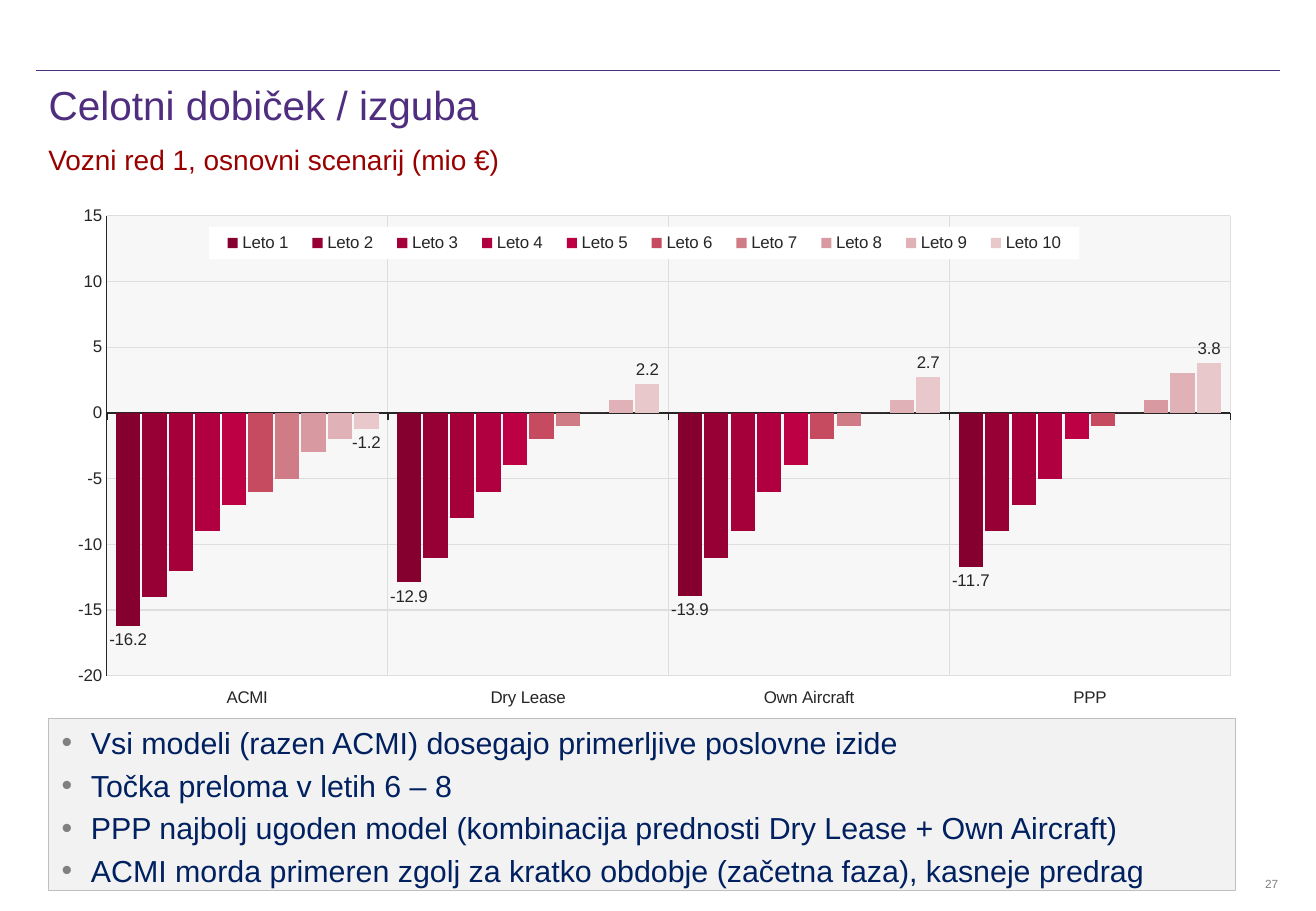
from lxml import etree
from pptx import Presentation
from pptx.chart.data import CategoryChartData
from pptx.dml.color import RGBColor
from pptx.enum.chart import XL_CHART_TYPE as ChartType, XL_LABEL_POSITION as LabelPos
from pptx.enum.chart import XL_LEGEND_POSITION as LegendPos, XL_TICK_LABEL_POSITION as TickLabelPos
from pptx.enum.chart import XL_TICK_MARK as TickMark
from pptx.enum.shapes import MSO_CONNECTOR as Connector, MSO_SHAPE as Shape
from pptx.enum.text import MSO_ANCHOR as Anchor, MSO_AUTO_SIZE as AutoSize, PP_ALIGN as Align
from pptx.oxml import parse_xml
from pptx.oxml.ns import nsdecls, qn
from pptx.util import Cm, Pt

COLORS = {
    "purple": "4F2D7F", "red": "990000", "navy": "002060", "text": "262626",
    "grid": "DEDEDE", "panel": "F2F2F2", "border": "BFBFBF",
    "bullet": "808080", "page": "7F7F7F", "white": "FFFFFF",
}
MODELS = ["ACMI", "Dry Lease", "Own Aircraft", "PPP"]
# One row per year: bar colour, then the profit or loss of each model
YEARS = [
    ("86002F", (-16.2, -12.9, -13.9, -11.7)),
    ("960035", (-14, -11, -11, -9)),
    ("A5003A", (-12, -8, -9, -7)),
    ("B1003F", (-9, -6, -6, -5)),
    ("BD0043", (-7, -4, -4, -2)),
    ("C74B60", (-6, -2, -2, -1)),
    ("D07C87", (-5, -1, -1, 0)),
    ("D899A0", (-3, 0, 0, 1)),
    ("E0B2B7", (-2, 1, 1, 3)),
    ("E8C8CB", (-1.2, 2.2, 2.7, 3.8)),
]
FINDINGS = [
    "Vsi modeli (razen ACMI) dosegajo primerljive poslovne izide",
    "Točka preloma v letih 6 – 8",
    "PPP najbolj ugoden model (kombinacija prednosti Dry Lease + Own Aircraft)",
    "ACMI morda primeren zgolj za kratko obdobje (začetna faza), kasneje predrag",
]


def rgb(name):
    return RGBColor.from_string(COLORS[name])


def apply(target, **values):
    for name, value in values.items():
        setattr(target, name, value)


def set_font(font, size, color):
    apply(font, name="Arial", size=Pt(size), bold=False)
    font.color.rgb = rgb(color)


def set_line(line, color, width):
    line.color.rgb = rgb(color)
    line.width = Pt(width)


def set_box(shape, box):
    apply(shape, **dict(zip(("left", "top", "width", "height"), map(Cm, box))))


def add_text(slide, box, text, size, color, align=Align.LEFT, wrap=True):
    frame = slide.shapes.add_textbox(*map(Cm, box)).text_frame
    apply(frame, word_wrap=wrap, margin_left=0, margin_top=0, margin_right=0, margin_bottom=0)
    paragraph = frame.paragraphs[0]
    apply(paragraph, text=text, alignment=align)
    set_font(paragraph.font, size, color)


def add_header(slide, box):
    left, top, width, height = box
    rule = slide.shapes.add_connector(
        Connector.STRAIGHT, Cm(left), Cm(top), Cm(left + width), Cm(top))
    set_line(rule.line, "purple", 0.25)
    etree.SubElement(rule.line._get_or_add_ln().getparent(), qn("a:effectLst"))

    title = slide.shapes.title
    set_box(title, (left, top + 0.27, width, 1.02))
    apply(title.text_frame, text="Celotni dobiček / izguba", word_wrap=True,
          vertical_anchor=Anchor.MIDDLE, auto_size=AutoSize.NONE)
    heading = title.text_frame.paragraphs[0]
    apply(heading, alignment=Align.LEFT, line_spacing=0.9)
    set_font(heading.font, 24, "purple")
    add_text(slide, (left + 0.25, top + 1.5, 17.1, height - 1.5),
             "Vozni red 1, osnovni scenarij (mio €)", 16.6, "red")


def manual_layout(x, y, width, height, inner=False):
    target = '<c:layoutTarget val="inner"/>' if inner else ""
    return parse_xml(
        f'<c:layout {nsdecls("c")}><c:manualLayout>{target}'
        '<c:xMode val="edge"/><c:yMode val="edge"/>'
        f'<c:x val="{x}"/><c:y val="{y}"/><c:w val="{width}"/><c:h val="{height}"/>'
        '</c:manualLayout></c:layout>')


def area_fill(color, opacity):
    return parse_xml(
        f'<c:spPr {nsdecls("c", "a")}><a:solidFill><a:srgbClr val="{COLORS[color]}">'
        f'<a:alpha val="{opacity * 1000}"/></a:srgbClr></a:solidFill></c:spPr>')


def style_axes(chart):
    models, profit = chart.category_axis, chart.value_axis
    for axis, width in ((models, 1), (profit, 0.5)):
        apply(axis, has_major_gridlines=True, minor_tick_mark=TickMark.NONE)
        set_line(axis.major_gridlines.format.line, "grid", 0.75)
        set_line(axis.format.line, "text", width)
        set_font(axis.tick_labels.font, 10, "text")
    apply(models, tick_label_position=TickLabelPos.LOW, major_tick_mark=TickMark.OUTSIDE)
    apply(profit, minimum_scale=-20, maximum_scale=15, major_unit=5,
          major_tick_mark=TickMark.NONE)
    apply(profit.tick_labels, number_format="#,##0", number_format_is_linked=False)


def style_series(plot):
    apply(plot, gap_width=75, overlap=-9, vary_by_categories=False)
    for series, (color, _) in zip(plot.series, YEARS):
        series.invert_if_negative = False
        series.format.fill.solid()
        series.format.fill.fore_color.rgb = RGBColor.from_string(color)
    for series in (plot.series[0], plot.series[-1]):
        labels = series.data_labels
        apply(labels, show_value=True, position=LabelPos.OUTSIDE_END,
              number_format='#,##0.0;\\-#,##0.0;" "', number_format_is_linked=False)
        set_font(labels.font, 10, "text")


def add_profit_chart(slide, box):
    data = CategoryChartData()
    data.categories = MODELS
    for year, (_, values) in enumerate(YEARS, 1):
        data.add_series(f"Leto {year}", values)
    chart = slide.shapes.add_chart(
        ChartType.COLUMN_CLUSTERED, *map(Cm, box), data).chart
    apply(chart, has_title=False, has_legend=True)
    set_font(chart.font, 10, "text")
    style_axes(chart)
    style_series(chart.plots[0])

    legend = chart.legend
    apply(legend, position=LegendPos.TOP, include_in_layout=False)
    set_font(legend.font, 10, "text")
    legend_xml = legend._element
    for old in legend_xml.findall(qn("c:layout")):
        legend_xml.remove(old)
    legend_xml.find(qn("c:legendPos")).addnext(manual_layout(0.145, 0.055, 0.715, 0.063))
    legend_xml.find(qn("c:overlay")).addnext(area_fill("white", 100))

    plot_area = chart._chartSpace.chart.plotArea
    for old in plot_area.findall(qn("c:layout")):
        plot_area.remove(old)
    plot_area.insert(0, manual_layout(0.061, 0.033, 0.923, 0.902, inner=True))
    plot_area.append(area_fill("panel", 59))


def add_bullet(paragraph):
    properties = paragraph._p.get_or_add_pPr()
    properties.set("marL", str(Cm(0.64)))
    properties.set("indent", str(Cm(-0.61)))
    color = etree.SubElement(properties, qn("a:buClr"))
    etree.SubElement(color, qn("a:srgbClr"), val=COLORS["bullet"])
    etree.SubElement(properties, qn("a:buFont"), typeface="Arial")
    etree.SubElement(properties, qn("a:buChar"), char="•")


def add_findings(slide, box):
    panel = slide.shapes.add_shape(Shape.RECTANGLE, *map(Cm, box))
    panel.shadow.inherit = False
    panel.fill.solid()
    panel.fill.fore_color.rgb = rgb("panel")
    set_line(panel.line, "border", 0.25)
    frame = panel.text_frame
    apply(frame, word_wrap=True, vertical_anchor=Anchor.TOP, margin_top=Cm(0.12))
    for index, finding in enumerate(FINDINGS):
        paragraph = frame.add_paragraph() if index else frame.paragraphs[0]
        add_bullet(paragraph)
        apply(paragraph, text=finding, alignment=Align.LEFT,
              space_before=Pt(3.7 if index else 0))
        set_font(paragraph.font, 18, "navy")


def main():
    deck = Presentation()
    apply(deck, slide_width=Cm(27.51), slide_height=Cm(19.05))
    slide = deck.slides.add_slide(deck.slide_layouts[5])
    add_header(slide, (0.76, 1.47, 25.99, 2.2))
    add_profit_chart(slide, (0.68, 4.16, 25.45, 10.67))
    add_findings(slide, (1.01, 15.02, 24.82, 3.6))
    add_text(slide, (26.42, 18.34, 0.3, 0.3), "27", 7, "page", Align.RIGHT, wrap=False)
    deck.save("out.pptx")


if __name__ == "__main__":
    main()
